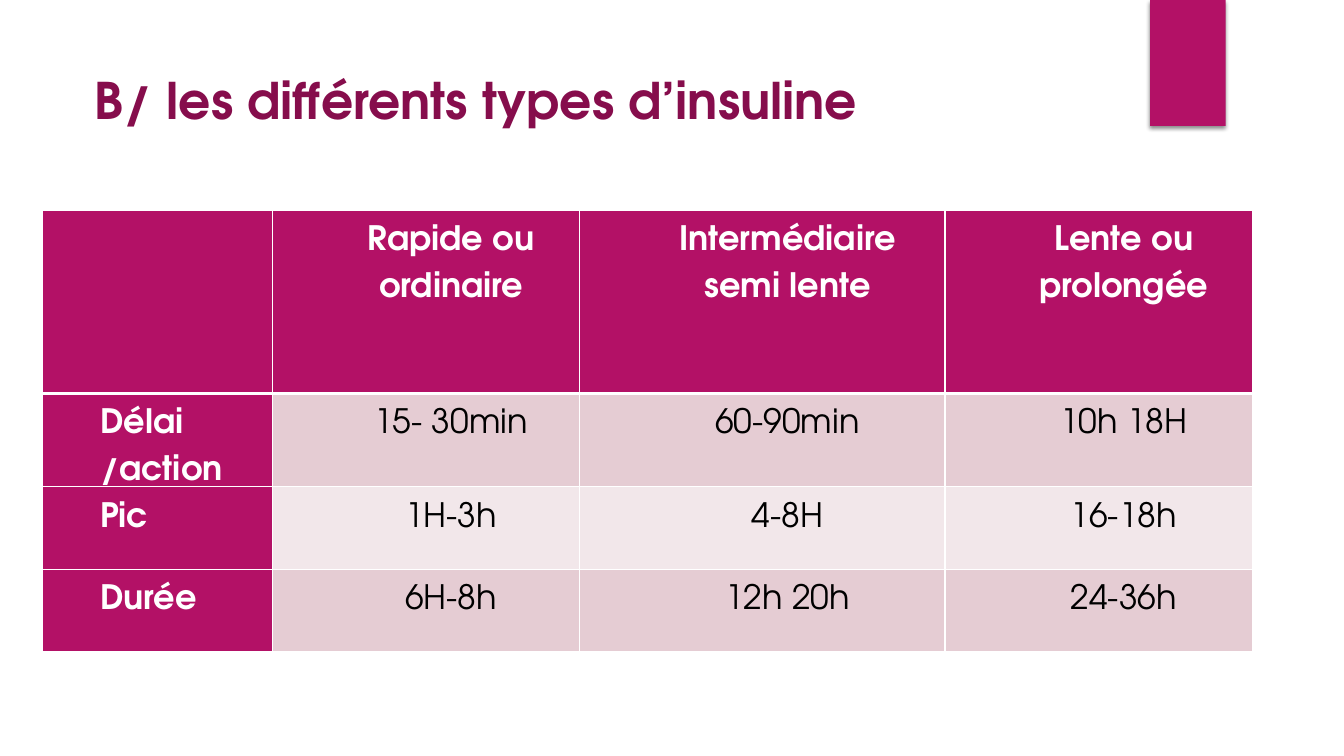
"""Build the slide comparing the types of insulin."""
from lxml import etree
from pptx import Presentation
from pptx.dml.color import RGBColor
from pptx.enum import shapes, text
from pptx.oxml import ns
from pptx.util import Pt

TITLE = "B/ les différents types d’insuline"
ROWS = [
    ["", "Rapide ou ordinaire", "Intermédiaire semi lente", "Lente ou prolongée"],
    ["Délai /action", "15- 30min", "60-90min", "10h 18H"],
    ["Pic", "1H-3h", "4-8H", "16-18h"],
    ["Durée", "6H-8h", "12h 20h", "24-36h"],
]
COLUMN_WIDTHS = [164, 219.5, 261, 219.5]
ROW_HEIGHTS = [131, 59, 59, 59]
FONT = "TeX Gyre Adventor"
COLORS = {"accent": "B31166", "title": "860D4C", "white": "FFFFFF",
          "black": "000000", "dark_band": "E5CCD3", "light_band": "F2E7EA"}


def color(name):
    return RGBColor.from_string(COLORS[name])


def set_font(paragraph, size, name, bold):
    font = paragraph.font
    font.name, font.size, font.bold = FONT, Pt(size), bold
    font.color.rgb = color(name)


def add_borders(cell, bottom_width):
    properties = cell._tc.get_or_add_tcPr()
    widths = {"lnL": 1, "lnR": 1, "lnT": 1, "lnB": bottom_width}
    for index, (tag, width) in enumerate(widths.items()):
        line = etree.Element(ns.qn("a:" + tag), w=str(Pt(width)))
        fill = etree.SubElement(line, ns.qn("a:solidFill"))
        etree.SubElement(fill, ns.qn("a:srgbClr"), val=COLORS["white"])
        properties.insert(index, line)


def add_ribbon(slide):
    ribbon = slide.shapes.add_shape(shapes.MSO_SHAPE.RECTANGLE, Pt(821.5), 0, Pt(54), Pt(90))
    ribbon.fill.solid()
    ribbon.fill.fore_color.rgb = color("accent")
    ribbon.line.fill.background()
    ribbon.shadow.inherit = False
    effects = ribbon._element.spPr.find(ns.qn("a:effectLst"))
    shadow = etree.SubElement(effects, ns.qn("a:outerShdw"), blurRad=str(Pt(3)),
                              dist=str(Pt(2)), dir="5400000", rotWithShape="0")
    shade = etree.SubElement(shadow, ns.qn("a:srgbClr"), val=COLORS["black"])
    etree.SubElement(shade, ns.qn("a:alpha"), val="45000")


def add_title(slide):
    title = slide.shapes.title
    title.left, title.top, title.width, title.height = Pt(60.5), Pt(44), Pt(740), Pt(54)
    frame = title.text_frame
    frame.text = TITLE
    frame.vertical_anchor = text.MSO_ANCHOR.MIDDLE
    paragraph = frame.paragraphs[0]
    paragraph.alignment = text.PP_ALIGN.LEFT
    set_font(paragraph, 36, "title", True)


def add_insulin_table(slide):
    table = slide.shapes.add_table(len(ROWS), len(COLUMN_WIDTHS), Pt(30.5), Pt(150),
                                   Pt(sum(COLUMN_WIDTHS)), Pt(sum(ROW_HEIGHTS))).table
    table.first_col = True
    for column, width in zip(table.columns, COLUMN_WIDTHS):
        column.width = Pt(width)
    for r, (labels, height) in enumerate(zip(ROWS, ROW_HEIGHTS)):
        table.rows[r].height = Pt(height)
        for c, label in enumerate(labels):
            cell = table.cell(r, c)
            header = r == 0 or c == 0
            cell.margin_left = cell.margin_right = Pt(5)
            cell.margin_top = cell.margin_bottom = 0
            cell.fill.solid()
            band = "dark_band" if r % 2 else "light_band"
            cell.fill.fore_color.rgb = color("accent" if header else band)
            add_borders(cell, 3 if r == 0 else 1)
            if label:
                cell.text = label
                paragraph = cell.text_frame.paragraphs[0]
                paragraph._p.get_or_add_pPr().set("marL", str(Pt(36)))
                paragraph.alignment = text.PP_ALIGN.CENTER if c else text.PP_ALIGN.LEFT
                paragraph.line_spacing = 1.5
                set_font(paragraph, 24, "white" if header else "black", header)


def main():
    presentation = Presentation()
    presentation.slide_width, presentation.slide_height = Pt(960), Pt(540)
    slide = presentation.slides.add_slide(presentation.slide_layouts[5])
    add_ribbon(slide)
    add_title(slide)
    add_insulin_table(slide)
    presentation.save("out.pptx")


if __name__ == "__main__":
    main()
